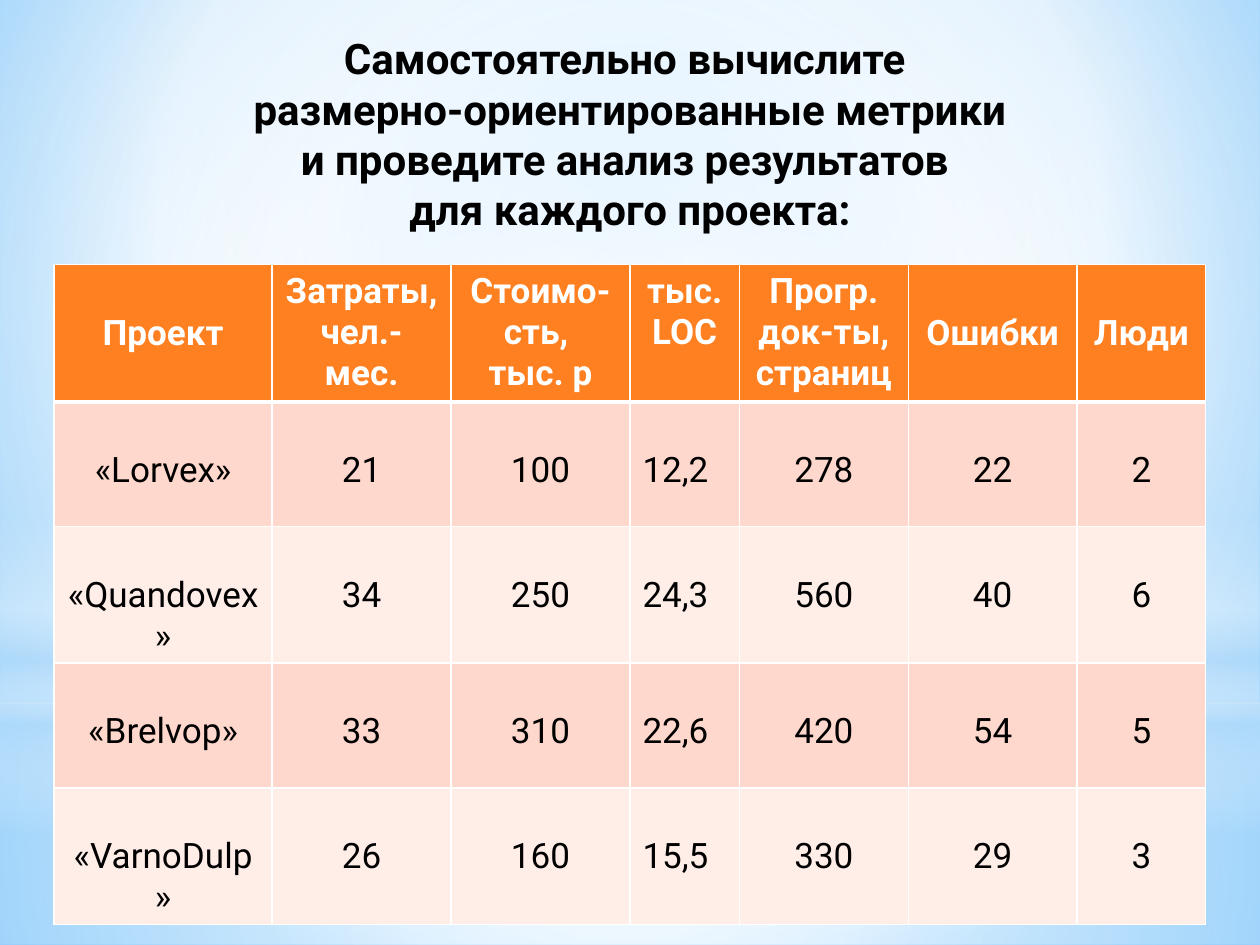
from dataclasses import dataclass
from typing import NamedTuple

from lxml.etree import SubElement
from pptx import Presentation
from pptx.dml.color import RGBColor
from pptx.enum.shapes import MSO_SHAPE
from pptx.enum.text import MSO_ANCHOR, PP_ALIGN
from pptx.oxml.ns import qn
from pptx.util import Inches, Pt


@dataclass(frozen=True)
class Theme:
    """Colours, font and type sizes of the slide."""
    font: str = "Roboto"
    title_size: int = 24
    table_size: int = 20
    ink: str = "000000"
    white: str = "FFFFFF"
    header: str = "FF8021"
    bands: tuple[str, str] = ("FFD8CD", "FFEDE8")
    haze: str = "B4DCFA"
    sky: str = "9ED5FF"
    deep_sky: str = "5BB9FF"


class Stop(NamedTuple):
    """A gradient stop: position and opacity in percent."""
    position: int
    color: str
    opacity: int = 100


class Layer(NamedTuple):
    """A full-width translucent layer of the backdrop."""
    top: float
    height: float
    stops: tuple[Stop, ...]
    kind: MSO_SHAPE = MSO_SHAPE.RECTANGLE
    linear: bool = False


class Column(NamedTuple):
    """A table column with its heading and values."""
    heading: str
    width: float
    values: tuple[str, ...]
    lowered: bool = False
    align: PP_ALIGN = PP_ALIGN.CENTER


THEME = Theme()
WHITE, HAZE = THEME.white, THEME.haze
CENTER = (50, 50, 50, 50)
LINE_HEIGHT = 0.33
CELL_MARGIN = 0.05
HEADER_HEIGHT, ROW_HEIGHT = 1.09, 0.99

SKY = (Stop(0, THEME.sky), Stop(60, WHITE), Stop(100, THEME.deep_sky))
LAYERS = (
    Layer(5.58, 1.92, (Stop(0, WHITE, 91), Stop(37, WHITE, 76), Stop(100, HAZE, 79))),
    Layer(0, 5.58, (Stop(0, WHITE, 89), Stop(48, WHITE, 62), Stop(100, HAZE, 79))),
    Layer(4.12, 2.5, (Stop(0, WHITE, 0), Stop(29, WHITE, 30), Stop(45, HAZE, 40),
                      Stop(55, WHITE, 26), Stop(65, HAZE, 60), Stop(100, WHITE, 0)),
          linear=True),
    Layer(1.75, 5.58, (Stop(0, WHITE), Stop(56, WHITE, 0)), MSO_SHAPE.OVAL),
)
TITLE = ("Самостоятельно вычислите \nразмерно-ориентированные метрики\n"
         "и проведите анализ результатов \nдля каждого проекта:")
COLUMNS = (
    Column("Проект", 1.73, ("«Lorvex»", "«Quandovex»", "«Brelvop»", "«VarnoDulp»"), True),
    Column("Затраты,\nчел.- мес.", 1.42, ("21", "34", "33", "26")),
    Column("Стоимо-сть, \vтыс. р", 1.42, ("100", "250", "310", "160")),
    Column("тыс. LOC", 0.87, ("12,2", "24,3", "22,6", "15,5"), align=PP_ALIGN.LEFT),
    Column("Прогр. док-ты, страниц", 1.34, ("278", "560", "420", "330")),
    Column("Ошибки", 1.34, ("22", "40", "54", "29"), True),
    Column("Люди", 1.02, ("2", "6", "5", "3"), True),
)


def write_text(frame, text: str, *, size: int, color: str, bold: bool = False,
               align: PP_ALIGN = PP_ALIGN.CENTER) -> None:
    """Fill a text frame with uniformly formatted paragraphs."""
    frame.text = text
    for para in frame.paragraphs:
        para.alignment = align
        for span in para.runs:
            span.font.name = THEME.font
            span.font.size = Pt(size)
            span.font.bold = bold
            span.font.color.rgb = RGBColor.from_string(color)


def set_gradient(fill, element, stops: tuple[Stop, ...], *,
                 focus: tuple[int, ...] = CENTER, linear: bool = False) -> None:
    """Give a fill a circular or a vertical gradient."""
    fill.gradient()
    gradient = element.find(f".//{qn('a:gradFill')}")
    gradient.clear()
    gradient.set("rotWithShape", "1")
    stop_list = SubElement(gradient, qn("a:gsLst"))
    for stop in stops:
        item = SubElement(stop_list, qn("a:gs"), pos=str(stop.position * 1000))
        color = SubElement(item, qn("a:srgbClr"), val=stop.color)
        if stop.opacity < 100:
            SubElement(color, qn("a:alpha"), val=str(stop.opacity * 1000))
    if linear:
        SubElement(gradient, qn("a:lin"), ang="5400000", scaled="0")
    else:
        route = SubElement(gradient, qn("a:path"), path="circle")
        sides = {side: str(part * 1000) for side, part in zip("ltrb", focus)}
        SubElement(route, qn("a:fillToRect"), **sides)


def add_layer(page, layer: Layer) -> None:
    """Draw one backdrop layer."""
    shape = page.shapes.add_shape(layer.kind, 0, Inches(layer.top),
                                  Inches(10), Inches(layer.height))
    shape.shadow.inherit = False
    shape.line.fill.background()
    set_gradient(shape.fill, shape._element, layer.stops, linear=layer.linear)


def place_title(page) -> None:
    """Position the title above the backdrop and write it."""
    title = page.shapes.title
    page.shapes._spTree.append(title._element)
    title.left, title.top = Inches(1.84), Inches(0.21)
    title.width, title.height = Inches(6.32), Inches(1.72)
    write_text(title.text_frame, TITLE, size=THEME.title_size, color=THEME.ink, bold=True)
    title.text_frame.word_wrap = False
    title.text_frame.vertical_anchor = MSO_ANCHOR.TOP


def style_cell(cell, fill: str, *, lowered: bool, bottom: int = 1, top: int = 1) -> None:
    """Set the borders, fill and top margin of a cell."""
    properties = cell._tc.get_or_add_tcPr()
    for side, width in (("L", 1), ("R", 1), ("T", top), ("B", bottom)):
        line = SubElement(properties, qn(f"a:ln{side}"), w=str(Pt(width)))
        SubElement(SubElement(line, qn("a:solidFill")), qn("a:srgbClr"), val=WHITE)
    cell.fill.solid()
    cell.fill.fore_color.rgb = RGBColor.from_string(fill)
    cell.margin_top = Inches(CELL_MARGIN + LINE_HEIGHT * lowered)


def add_project_table(page) -> None:
    """Draw the table of project measurements."""
    row_count = len(COLUMNS[0].values)
    table = page.shapes.add_table(
        row_count + 1, len(COLUMNS), Inches(0.43), Inches(2.1),
        Inches(sum(column.width for column in COLUMNS)),
        Inches(HEADER_HEIGHT + row_count * ROW_HEIGHT)).table
    for index, row in enumerate(table.rows):
        row.height = Inches(ROW_HEIGHT if index else HEADER_HEIGHT)
    for place, column in enumerate(COLUMNS):
        table.columns[place].width = Inches(column.width)
        heading = table.cell(0, place)
        style_cell(heading, THEME.header, lowered=column.lowered, bottom=3)
        write_text(heading.text_frame, column.heading, size=THEME.table_size,
                   color=WHITE, bold=True)
        for index, value in enumerate(column.values):
            cell = table.cell(index + 1, place)
            style_cell(cell, THEME.bands[index % 2], lowered=True, top=1 if index else 3)
            write_text(cell.text_frame, value, size=THEME.table_size,
                       color=THEME.ink, align=column.align)


def main() -> None:
    """Build and save the slide."""
    deck = Presentation()
    deck.slide_width, deck.slide_height = Inches(10), Inches(7.5)
    page = deck.slides.add_slide(deck.slide_layouts[5])
    set_gradient(page.background.fill, page._element, SKY, focus=(20, 10, 20, 60))
    for layer in LAYERS:
        add_layer(page, layer)
    place_title(page)
    add_project_table(page)
    deck.save("out.pptx")


if __name__ == "__main__":
    main()
